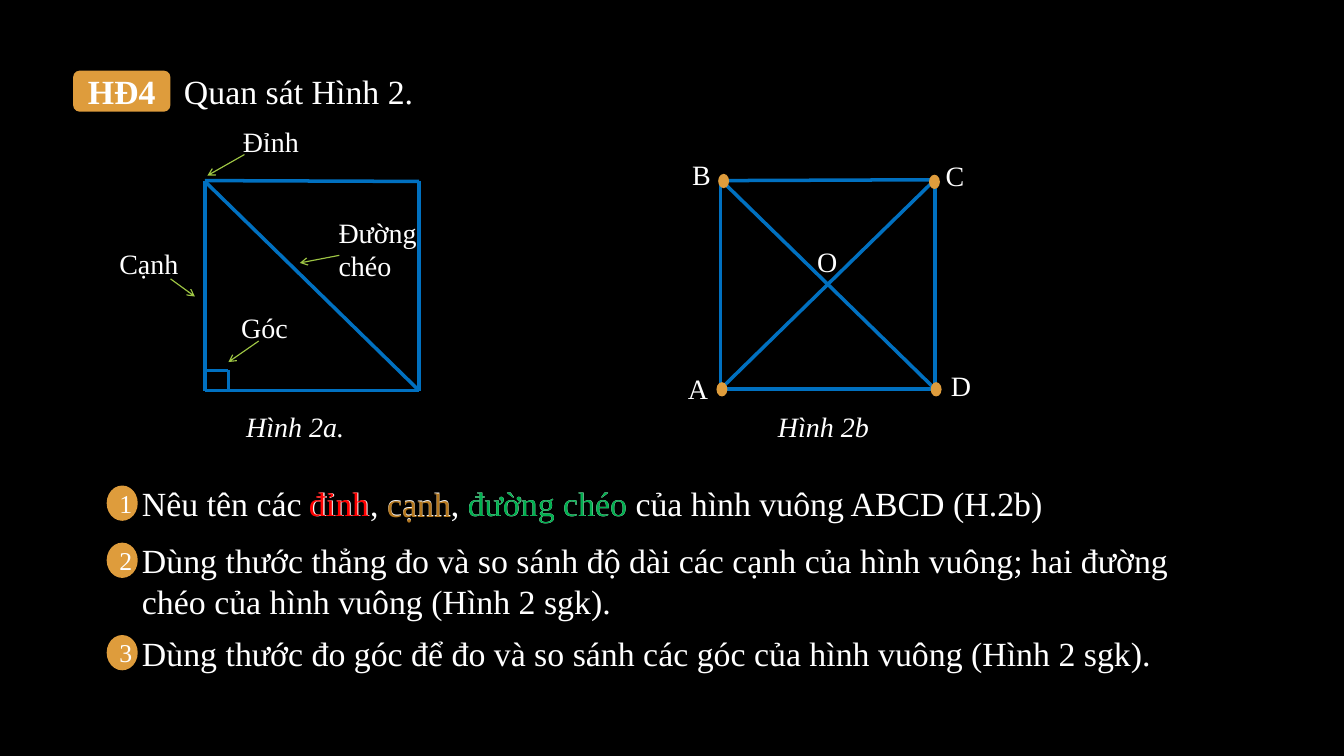
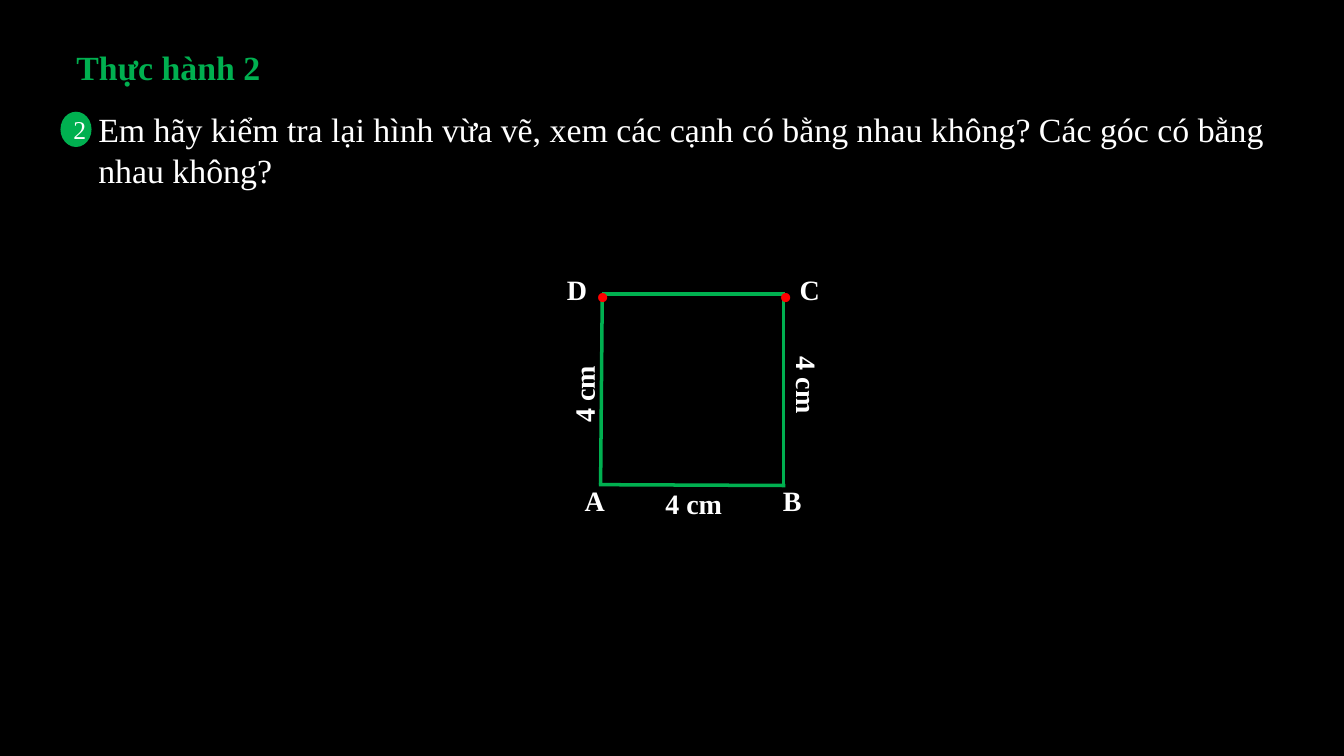
from lxml import etree
from pptx import Presentation
from pptx.dml.color import RGBColor
from pptx.enum.shapes import MSO_CONNECTOR as CONN, MSO_SHAPE as SHAPE
from pptx.enum.text import MSO_ANCHOR as ANCHOR, MSO_AUTO_SIZE as FIT, PP_ALIGN as ALIGN
from pptx.oxml.ns import qn
from pptx.util import Inches, Pt

FONT = "Times New Roman"
BLACK, WHITE, RED = "000000", "FFFFFF", "FF0000"
ORANGE, BROWN, BLUE = "DE9C3C", "B5781F", "0070C0"
GREEN, LIME = "00B050", "9EC544"
BODY, LABEL, NUMBER, DOT = 29, 24, 22, 66


def rgb(value):
    return RGBColor.from_string(value)


class Deck:
    """Holds the shared style and the current slide."""

    def __init__(self):
        self.prs = Presentation()
        self.prs.slide_width, self.prs.slide_height = Inches(16), Inches(9)

    def new_slide(self):
        self.s = self.prs.slides.add_slide(self.prs.slide_layouts[6])
        fill = self.s.background.fill
        fill.solid()
        fill.fore_color.rgb = rgb(BLACK)

    def set_text(self, tf, text, size, color, bold=False, italic=False):
        p = tf.paragraphs[0]
        p.text = text
        p.font.name, p.font.size = FONT, Pt(size)
        p.font.bold, p.font.italic = bold, italic
        p.font.color.rgb = rgb(color)
        return p

    def margins(self, tf, x, y):
        tf.margin_left = tf.margin_right = Inches(x)
        tf.margin_top = tf.margin_bottom = Inches(y)

    def text(self, text, x, y, w, h=0.53, size=LABEL, color=WHITE,
             inset=(0.12, 0.06), rotation=0, **style):
        sp = self.s.shapes.add_textbox(Inches(x), Inches(y), Inches(w), Inches(h))
        sp.rotation = rotation
        tf = sp.text_frame
        tf.word_wrap = True
        tf.auto_size = FIT.SHAPE_TO_FIT_TEXT
        self.margins(tf, *inset)
        self.set_text(tf, text, size, color, **style)

    def tight_text(self, text, x, y, w, h, **style):
        self.text(text, x, y, w, h, inset=(0.1, 0.05), **style)

    def shape(self, kind, x, y, w, h, color):
        sp = self.s.shapes.add_shape(kind, Inches(x), Inches(y), Inches(w), Inches(h))
        sp.shadow.inherit = False
        sp.fill.solid()
        sp.fill.fore_color.rgb = rgb(color)
        sp.line.fill.background()
        return sp

    def shape_text(self, sp, text, size, **style):
        tf = sp.text_frame
        tf.vertical_anchor = ANCHOR.MIDDLE
        self.set_text(tf, text, size, WHITE, **style).alignment = ALIGN.CENTER
        return tf

    def tag(self, text, x, y, w, h):
        sp = self.shape(SHAPE.ROUNDED_RECTANGLE, x, y, w, h, ORANGE)
        self.margins(self.shape_text(sp, text, BODY, bold=True), 0.12, 0.06)

    def task(self, number, text, x, y, w, h, color, gap=0.3):
        self.text(text, x + gap, y, w, h, BODY)
        sp = self.shape(SHAPE.OVAL, x, y + 0.09, 0.37, 0.42, color)
        self.shape_text(sp, number, NUMBER)

    def line(self, x1, y1, x2, y2, color, width=3.0):
        ends = [Inches(v) for v in (x1, y1, x2, y2)]
        line = self.s.shapes.add_connector(CONN.STRAIGHT, *ends)
        line.line.color.rgb = rgb(color)
        line.line.width = Pt(width)
        etree.SubElement(line._element.spPr, qn("a:effectLst"))
        return line

    def arrow(self, *ends):
        line = self.line(*ends, LIME, 1)
        ln = line._element.spPr.find(qn("a:ln"))
        etree.SubElement(ln, qn("a:tailEnd"), type="arrow")


def observe_squares(deck):
    deck.new_slide()
    deck.tag("HĐ4", 0.87, 0.84, 1.16, 0.49)
    deck.text("Quan sát Hình 2.", 2.07, 0.78, 4.62, 0.61, BODY)

    left, top, right, bottom = 2.44, 2.16, 4.99, 4.65
    for ends in [(left, 2.15, right, top), (left, top, left, bottom),
                 (left, bottom, right, bottom), (right, 2.15, right, bottom),
                 (left, top, right, bottom)]:
        deck.line(*ends, BLUE)
    deck.line(left, 4.41, 2.72, 4.41, BLUE, 2.25)
    deck.line(2.72, 4.41, 2.72, bottom, BLUE, 2.25)

    left, top, right, bottom = 8.58, 2.14, 11.13, 4.63
    for ends in [(8.62, 2.15, right, top), (left, top, left, bottom),
                 (left, bottom, right, bottom), (right, top, right, bottom),
                 (left, top, right, bottom), (left, bottom, right, top)]:
        deck.line(*ends, BLUE)
    for name, x, y in [("A", 8.09, 4.37), ("B", 8.14, 1.83), ("C", 11.16, 1.84),
                       ("D", 11.22, 4.34), ("O", 9.63, 2.86)]:
        deck.tight_text(name, x, y, 0.59, 0.5)

    for ends in [(2.91, 1.84, 2.47, 2.09), (2.03, 3.32, 2.32, 3.53),
                 (4.04, 3.04, 3.57, 3.13), (3.08, 4.06, 2.72, 4.31)]:
        deck.arrow(*ends)
    for name, x, y, h in [("Đỉnh", 2.77, 1.42, 0.53), ("Đường chéo", 3.91, 2.5, 0.93),
                          ("Cạnh", 1.3, 2.87, 0.53), ("Góc", 2.75, 3.64, 0.53)]:
        deck.text(name, x, y, 1.18, h)
    for caption, x in [("Hình 2a.", 2.81), ("Hình 2b", 9.14)]:
        deck.text(caption, x, 4.82, 2.31, italic=True)

    tasks = [
        ("Nêu tên các đỉnh, cạnh, đường chéo của hình vuông ABCD (H.2b)",
         5.69, 11.57, 0.61),
        ("Dùng thước thẳng đo và so sánh độ dài các cạnh của hình vuông; "
         "hai đường chéo của hình vuông (Hình 2 sgk).", 6.37, 13.31, 1.1),
        ("Dùng thước đo góc để đo và so sánh các góc của hình vuông (Hình 2 sgk).",
         7.47, 12.51, 0.61),
    ]
    for number, (text, y, w, h) in enumerate(tasks, 1):
        deck.task(str(number), text, 1.27, y, w, h, ORANGE)
    for word, x, y, w, color in [("đỉnh", 3.58, 5.7, 0.99, RED),
                                 ("cạnh", 4.51, 5.71, 1.01, BROWN),
                                 ("đường chéo", 5.47, 5.7, 2.29, GREEN)]:
        deck.tight_text(word, x, y, w, 0.59, size=BODY, color=color)
    for x, y in [(8.53, 4.55), (11.08, 4.55), (8.55, 2.07), (11.06, 2.08)]:
        deck.shape(SHAPE.OVAL, x, y, 0.13, 0.17, ORANGE)


def check_drawing(deck):
    deck.new_slide()
    deck.text("Thực hành 2", 0.79, 0.49, 3.04, 0.61, BODY, GREEN, bold=True)
    deck.task("2", "Em hãy kiểm tra lại hình vừa vẽ, xem các cạnh có bằng nhau không? "
              "Các góc có bằng nhau không?", 0.72, 1.24, 14.37, 1.1, GREEN, gap=0.33)

    for ends in [(7.17, 3.5, 9.34, 3.5), (7.13, 5.77, 9.35, 5.78),
                 (9.33, 5.8, 9.33, 3.5), (7.15, 5.77, 7.17, 3.5)]:
        deck.line(*ends, GREEN)
    for name, x, y in [("A", 6.84, 5.7), ("B", 9.2, 5.7), ("C", 9.4, 3.19), ("D", 6.63, 3.19)]:
        deck.text(name, x, y, 0.53, bold=True)
    for x, y, w, rotation in [(6.24, 4.17, 1.43, 270), (8.89, 4.58, 1.43, 90),
                              (7.8, 5.73, 0.93, 0)]:
        deck.text("4 cm", x, y, w, rotation=rotation, bold=True)
    for x in (6.97, 9.14):
        deck.tight_text(".", x, 2.62, 0.33, 1.21, size=DOT, color=RED)


def main():
    deck = Deck()
    observe_squares(deck)
    check_drawing(deck)
    deck.prs.save("out.pptx")


if __name__ == "__main__":
    main()
